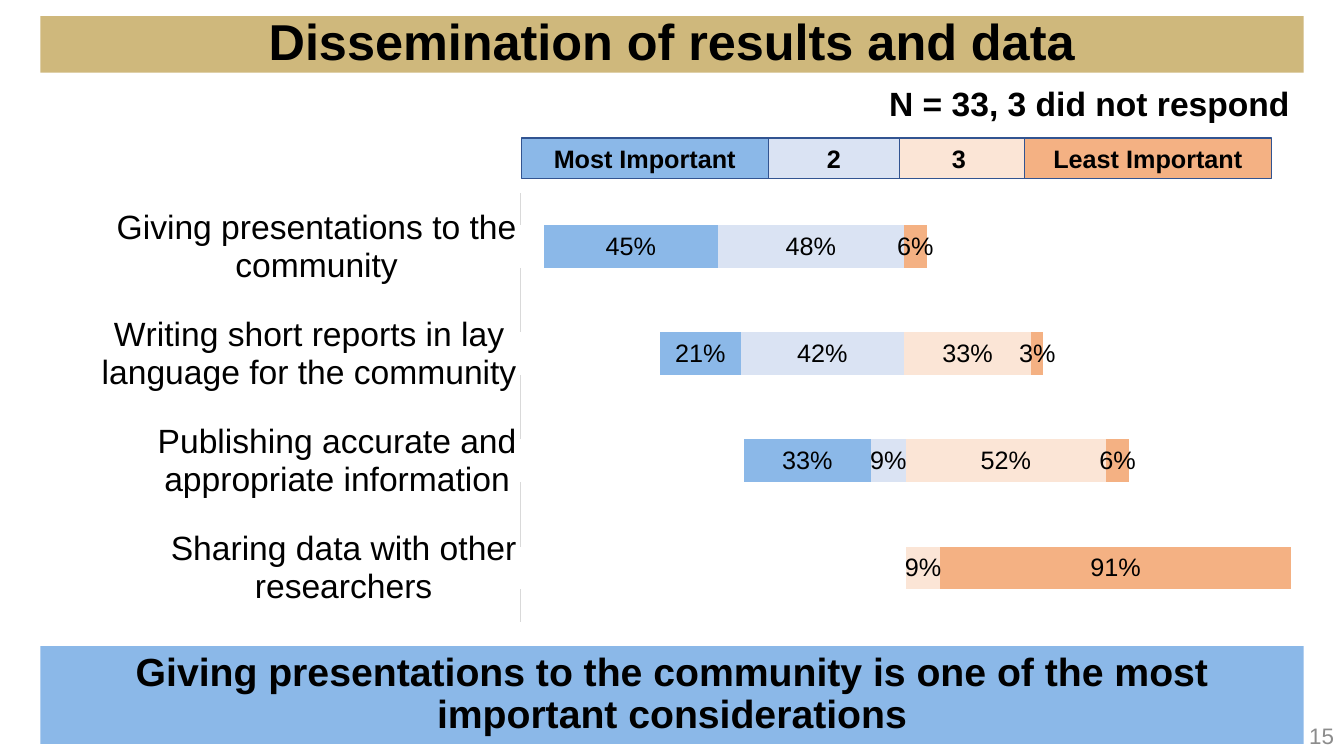
import pptx
import pptx.chart.data
import pptx.dml.color
import pptx.enum.chart
import pptx.enum.shapes
import pptx.enum.text
import pptx.oxml
import pptx.oxml.ns
import pptx.util

Inches = pptx.util.Inches
Pt = pptx.util.Pt
RGBColor = pptx.dml.color.RGBColor
Align = pptx.enum.text.PP_ALIGN
Anchor = pptx.enum.text.MSO_ANCHOR

BLACK = RGBColor(0x00, 0x00, 0x00)
WHITE = RGBColor(0xFF, 0xFF, 0xFF)
GOLD = RGBColor(0xCF, 0xB8, 0x7C)
BLUE = RGBColor(0x8B, 0xB8, 0xE8)
PALE_BLUE = RGBColor(0xDA, 0xE3, 0xF3)
PEACH = RGBColor(0xFB, 0xE5, 0xD6)
ORANGE = RGBColor(0xF4, 0xB1, 0x83)
NAVY = RGBColor(0x32, 0x54, 0x91)
GREY = RGBColor(0x8C, 0x8C, 0x8C)
RULE = RGBColor(0xD9, 0xD9, 0xD9)
FONT = "Arial"

GROUPS = [
    "Sharing data with other researchers",
    "Publishing accurate and appropriate information",
    "Writing short reports in lay language for the community",
    "Giving presentations to the community",
]
# Shares per group; the white outer series centre the bars
SHARES = [
    (WHITE, [1, 0.58, 0.36, 0.06]),
    (BLUE, [0, 0.33, 0.21, 0.45]),
    (PALE_BLUE, [0, 0.09, 0.42, 0.48]),
    (PEACH, [0.09, 0.52, 0.33, 0]),
    (ORANGE, [0.91, 0.06, 0.03, 0.06]),
    (WHITE, [0, 0.42, 0.64, 0.94]),
]


def set_font(font, size, color=BLACK, bold=False):
    font.name = FONT
    font.size = Pt(size)
    font.bold = bold
    font.color.rgb = color


def write(shape, text, size, align, color=BLACK, bold=True, gap=None):
    frame = shape.text_frame
    frame.text = text
    frame.vertical_anchor = Anchor.MIDDLE
    para = frame.paragraphs[0]
    para.alignment = align
    para.line_spacing = gap
    set_font(para.runs[0].font, size, color, bold)


def add_box(shapes, box, color):
    rect = pptx.enum.shapes.MSO_SHAPE.RECTANGLE
    shape = shapes.add_shape(rect, *map(Inches, box))
    shape.shadow.inherit = False
    shape.fill.solid()
    shape.fill.fore_color.rgb = color
    shape.line.fill.background()
    return shape


def add_title(slide, box):
    title = slide.shapes.title
    title.left, title.top, title.width, title.height = map(Inches, box)
    title.fill.solid()
    title.fill.fore_color.rgb = GOLD
    write(title, "Dissemination of results and data", 36, Align.CENTER, gap=0.9)


def add_banner(slide, box):
    banner = add_box(slide.shapes, box, BLUE)
    text = "Giving presentations to the community is one of the most important considerations"
    write(banner, text, 28, Align.CENTER, gap=0.9)


def add_note(slide, box, text, size, align, color=BLACK, bold=True, wrap=True):
    note = slide.shapes.add_textbox(*map(Inches, box))
    note.text_frame.word_wrap = wrap
    write(note, text, size, align, color, bold)


def add_legend(slide, box):
    left, top, width, height = box
    wide, small = 2.45, 1.3
    right = left + width
    keys = [
        (right - wide - small, small, PEACH, "3"),
        (left + wide, small, PALE_BLUE, "2"),
        (left, wide, BLUE, "Most Important"),
        (right - wide, wide, ORANGE, "Least Important"),
    ]
    group = slide.shapes.add_group_shape()
    for x, span, color, text in keys:
        key = add_box(group.shapes, (x, top, span, height), color)
        key.line.color.rgb = NAVY
        key.line.width = Pt(1)
        write(key, text, 18, Align.CENTER)


def place_plot(chart, x, y, width, height):
    """Fix the inner plot area, in shares of the chart's size."""
    plot = chart._chartSpace.chart.plotArea
    for old in plot.findall(pptx.oxml.ns.qn("c:layout")):
        plot.remove(old)
    plot.insert(0, pptx.oxml.parse_xml(
        f'<c:layout {pptx.oxml.ns.nsdecls("c")}><c:manualLayout>'
        '<c:layoutTarget val="inner"/><c:xMode val="edge"/><c:yMode val="edge"/>'
        f'<c:x val="{x}"/><c:y val="{y}"/><c:w val="{width}"/><c:h val="{height}"/>'
        '</c:manualLayout></c:layout>'))


def label_bars(bars, shares):
    labels = bars.data_labels
    labels.show_value = True
    labels.number_format = "0%"
    labels.number_format_is_linked = False
    set_font(labels.font, 18)
    # Drop the labels of empty bars
    if 0 in shares:
        labels._element.insert(0, pptx.oxml.parse_xml(
            f'<c:dLbl {pptx.oxml.ns.nsdecls("c")}>'
            f'<c:idx val="{shares.index(0)}"/><c:delete val="1"/></c:dLbl>'))


def add_bars(slide, box):
    data = pptx.chart.data.CategoryChartData(number_format="0%")
    data.categories = GROUPS
    for count, (color, shares) in enumerate(SHARES, 1):
        data.add_series(f"Series {count}", shares)
    kind = pptx.enum.chart.XL_CHART_TYPE.BAR_STACKED_100
    chart = slide.shapes.add_chart(kind, *map(Inches, box), data).chart
    chart.has_legend = False
    chart.has_title = False
    set_font(chart.font, 18)
    place_plot(chart, 0.38, 0.03, 0.61, 0.93)

    # Axes
    no_tick = pptx.enum.chart.XL_TICK_MARK.NONE
    names = chart.category_axis
    names.major_tick_mark = no_tick
    names.format.line.color.rgb = RULE
    names.format.line.width = Pt(0.75)
    set_font(names.tick_labels.font, 24)
    scale = chart.value_axis
    scale.minimum_scale, scale.maximum_scale = 0, 1
    scale.has_major_gridlines = False
    scale.visible = False

    # Bars
    plot = chart.plots[0]
    plot.gap_width = 150
    plot.overlap = 100
    plot.vary_by_categories = False
    for bars, (color, shares) in zip(plot.series, SHARES):
        bars.format.fill.solid()
        bars.format.fill.fore_color.rgb = color
        if color != WHITE:
            label_bars(bars, shares)


def main():
    deck = pptx.Presentation()
    deck.slide_width, deck.slide_height = Inches(13.33), Inches(7.5)
    slide = deck.slides.add_slide(deck.slide_layouts[5])
    left, width = 0.4, 12.53
    add_title(slide, (left, 0.16, width, 0.56))
    add_banner(slide, (left, 6.41, width, 0.97))
    add_note(slide, (8.72, 0.77, 4.21, 0.5), "N = 33, 3 did not respond",
             24, Align.LEFT, wrap=False)
    add_bars(slide, (left, 1.78, width, 4.57))
    add_note(slide, (10.33, 7.1, 3, 0.4), "15", 16, Align.RIGHT, GREY, False)
    add_legend(slide, (5.17, 1.37, 7.44, 0.4))
    deck.save("out.pptx")


if __name__ == "__main__":
    main()
